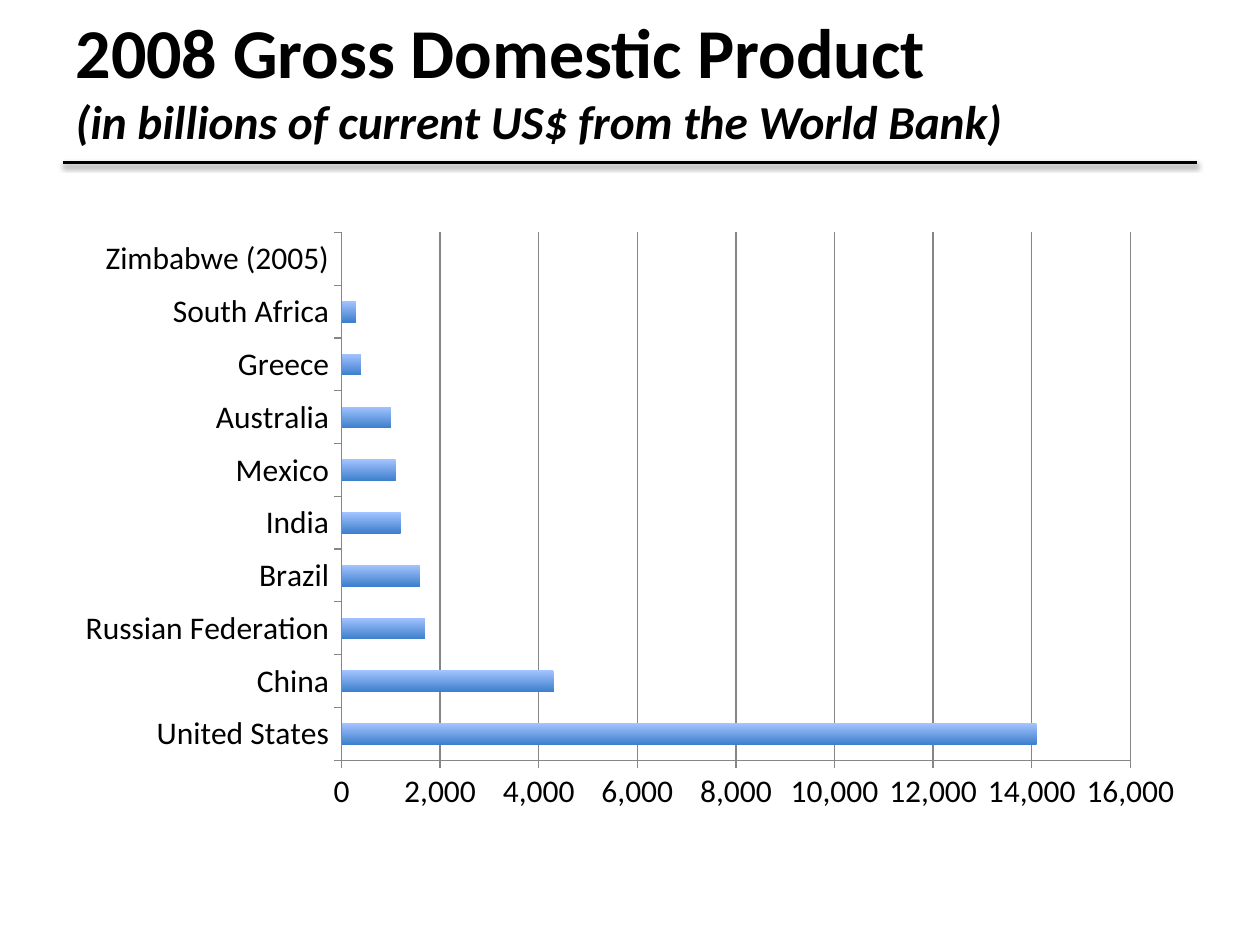
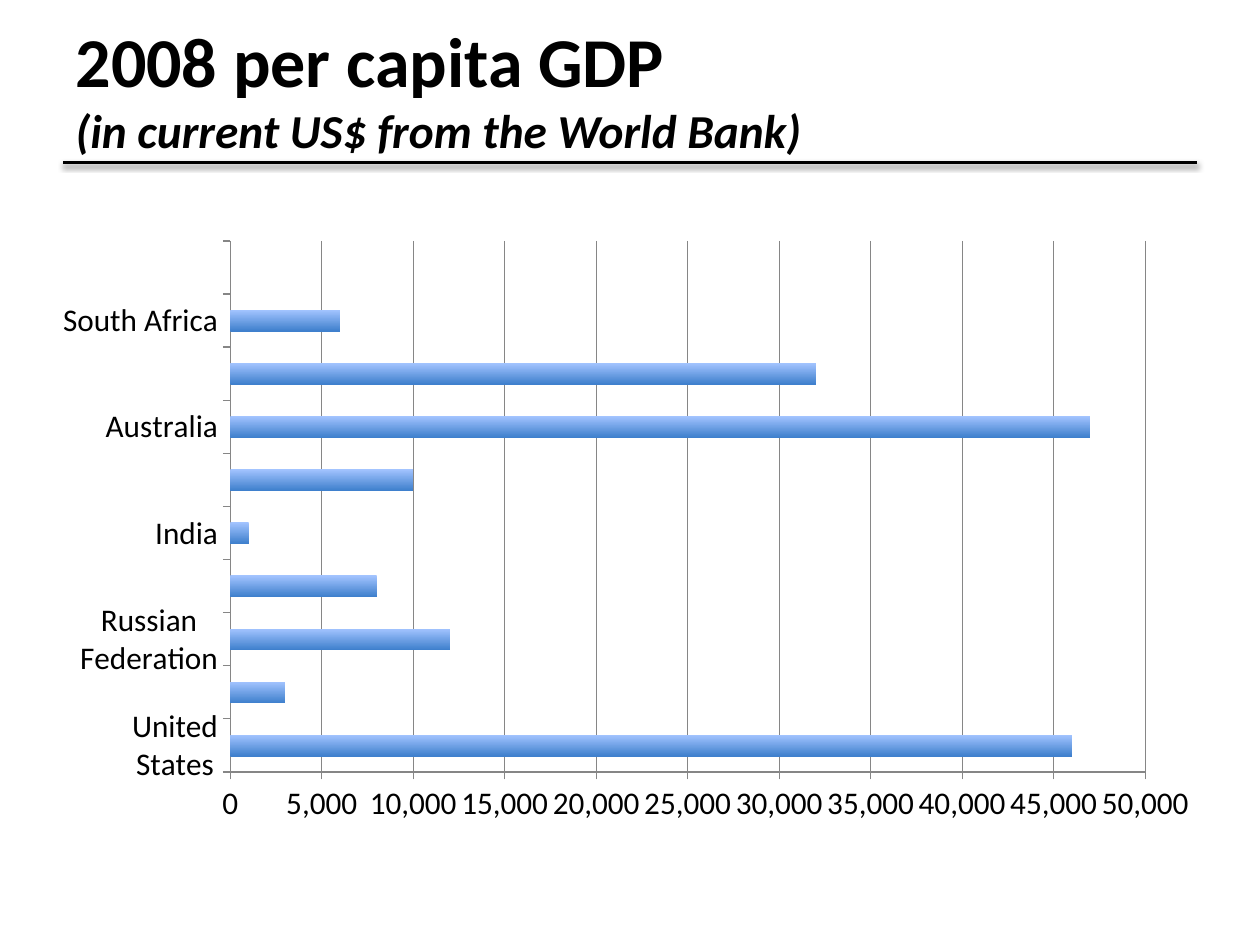
from pptx import Presentation, oxml, util as u
from pptx.chart.data import CategoryChartData
from pptx.dml.color import RGBColor
from pptx.enum import chart as charts, shapes, text
from pptx.oxml.ns import nsdecls

WIDTH, HEIGHT = 10, 7.5
MARGIN = WIDTH / 20
CONTENT_WIDTH = WIDTH - 2 * MARGIN
TITLE_HEIGHT = HEIGHT / 6
RULE_TOP = 1.29
CHART_TOP, CHART_HEIGHT = 1.75, 4.78
FONT = "Calibri"
BLACK, GRAY = "000000", "868686"
BAR_TOP, BAR_BOTTOM = "A3C4FF", "3F80CD"

COUNTRIES = ["United States", "China", "Russian Federation", "Brazil", "India",
             "Mexico", "Australia", "Greece", "South Africa", "Zimbabwe (2005)"]
PAGES = [
    dict(title="2008 Gross Domestic Product",
         subtitle="(in billions of current US$ from the World Bank)",
         title_top=0, plot_percent=None, step=2000, maximum=16000,
         values=[14100, 4300, 1700, 1600, 1200, 1100, 1000, 400, 300, 0]),
    dict(title="2008 per capita GDP",
         subtitle="(in current US$ from the World Bank)",
         title_top=0.07, plot_percent=dict(x=14, y=3.4, w=81.4, h=88.2),
         step=5000, maximum=50000,
         values=[46000, 3000, 12000, 8000, 1000, 10000, 47000, 32000, 6000, 0]),
]


def color(value):
    return RGBColor.from_string(value)


def format_font(font, size, bold=False, italic=False):
    font.name, font.size = FONT, u.Pt(size)
    font.bold, font.italic = bold, italic
    font.color.rgb = color(BLACK)


def format_line(line, shade, width):
    line.color.rgb = color(shade)
    line.width = u.Pt(width)


def add_span(para, words, **style):
    span = para.add_run()
    span.text = words
    format_font(span.font, **style)


def add_rule(page):
    rule = page.shapes.add_connector(
        shapes.MSO_CONNECTOR.STRAIGHT, u.Inches(MARGIN), u.Inches(RULE_TOP),
        u.Inches(WIDTH - MARGIN), u.Inches(RULE_TOP))
    format_line(rule.line, BLACK, 2)
    rule.element.spPr.append(oxml.parse_xml(
        f'<a:effectLst {nsdecls("a")}>'
        f'<a:outerShdw blurRad="{u.Pt(3.1)}" dist="{u.Pt(1.6)}" dir="5400000" rotWithShape="0">'
        f'<a:srgbClr val="{BLACK}"><a:alpha val="38000"/></a:srgbClr>'
        '</a:outerShdw></a:effectLst>'))


def add_title(page, title, subtitle, top):
    box = page.shapes.title
    box.left, box.top = u.Inches(MARGIN), u.Inches(top)
    box.width, box.height = u.Inches(CONTENT_WIDTH), u.Inches(TITLE_HEIGHT)
    frame = box.text_frame
    frame.word_wrap = True
    frame.auto_size = text.MSO_AUTO_SIZE.NONE
    frame.vertical_anchor = text.MSO_ANCHOR.MIDDLE
    para = frame.paragraphs[0]
    para.alignment = text.PP_ALIGN.LEFT
    add_span(para, title, size=40, bold=True)
    para.add_line_break()
    add_span(para, subtitle, size=27, bold=True, italic=True)


def place_plot(chart, plot_percent):
    area = chart.element.xpath("//c:plotArea")[0]
    for layout in area.xpath("c:layout"):
        area.remove(layout)
    shares = "".join(f'<c:{key} val="{percent / 100:.3f}"/>'
                     for key, percent in plot_percent.items())
    area.insert(0, oxml.parse_xml(
        f'<c:layout {nsdecls("c")}><c:manualLayout><c:layoutTarget val="inner"/>'
        '<c:xMode val="edge"/><c:yMode val="edge"/>'
        f'{shares}</c:manualLayout></c:layout>'))


def add_bars(page, values, step, maximum, plot_percent):
    data = CategoryChartData(number_format="#,##0")
    data.categories = COUNTRIES
    data.add_series("Series 1", values)
    chart = page.shapes.add_chart(
        charts.XL_CHART_TYPE.BAR_CLUSTERED, u.Inches(MARGIN), u.Inches(CHART_TOP),
        u.Inches(CONTENT_WIDTH), u.Inches(CHART_HEIGHT), data).chart
    chart.has_legend = chart.has_title = False
    format_font(chart.font, 18)
    for axis in (chart.category_axis, chart.value_axis):
        axis.major_tick_mark = charts.XL_TICK_MARK.OUTSIDE
        format_line(axis.format.line, GRAY, 0.75)
    scale = chart.value_axis
    scale.minimum_scale, scale.maximum_scale, scale.major_unit = 0, maximum, step
    scale.tick_labels.number_format = "#,##0"
    scale.tick_labels.number_format_is_linked = False
    scale.has_major_gridlines = True
    format_line(scale.major_gridlines.format.line, GRAY, 0.75)
    bars = chart.plots[0]
    bars.gap_width = 150
    bars.vary_by_categories = False
    fill = bars.series[0].format.fill
    fill.gradient()
    fill.gradient_angle = 270
    for stop, shade in zip(fill.gradient_stops, (BAR_TOP, BAR_BOTTOM)):
        stop.color.rgb = color(shade)
    if plot_percent:
        place_plot(chart, plot_percent)


def main():
    deck = Presentation()
    deck.slide_width, deck.slide_height = u.Inches(WIDTH), u.Inches(HEIGHT)
    for content in PAGES:
        page = deck.slides.add_slide(deck.slide_layouts[5])
        add_rule(page)
        add_title(page, content["title"], content["subtitle"], content["title_top"])
        add_bars(page, content["values"], content["step"], content["maximum"],
                 content["plot_percent"])
    deck.save("out.pptx")


if __name__ == "__main__":
    main()
